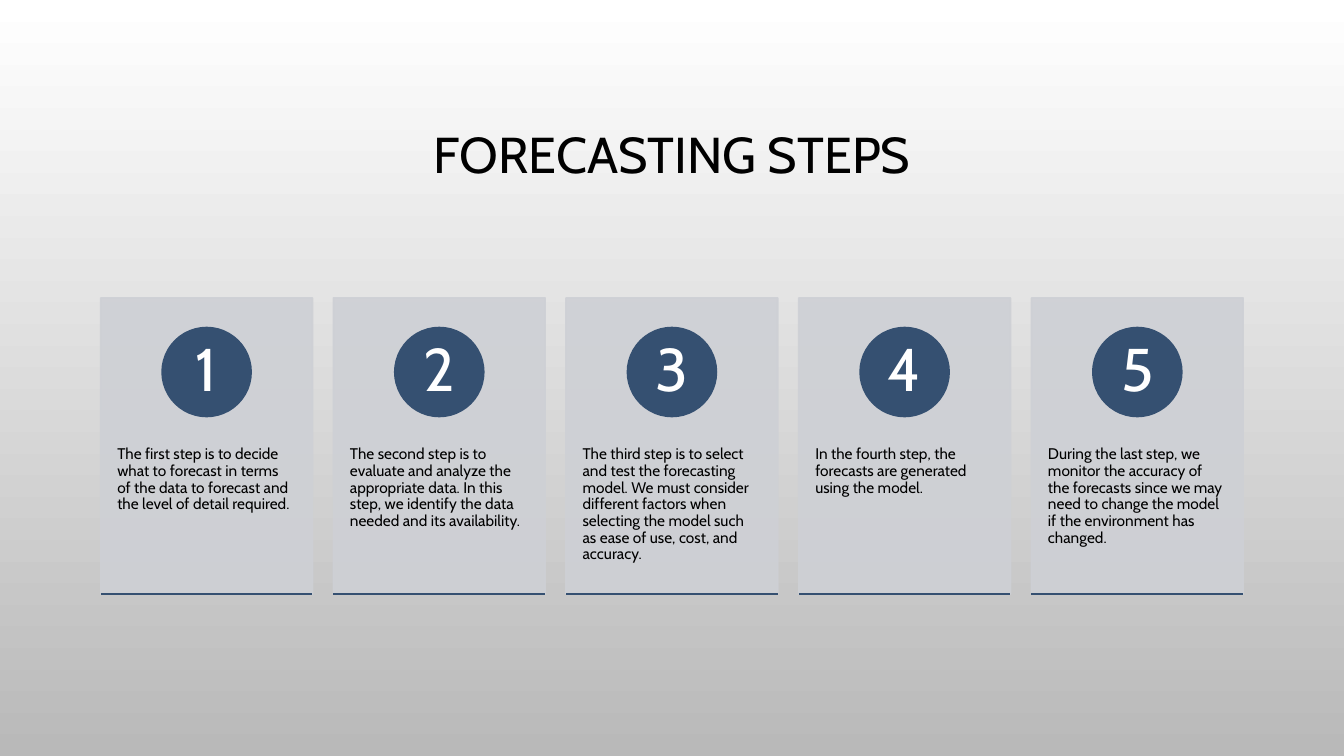
from lxml import etree
from pptx import Presentation
from pptx.dml.color import RGBColor
from pptx.enum import shapes, text
from pptx.oxml.ns import qn
from pptx.util import Pt

NAVY, CARD, BLACK, WHITE = "355071", "CED0D5", "000000", "FFFFFF"
STEPS = [
    "The first step is to decide what to forecast in terms of the data to forecast and the level of detail required.",
    "The second step is to evaluate and analyze the appropriate data. In this step, we identify the data needed and its availability.",
    "The third step is to select and test the forecasting model. We must consider different factors when selecting the model such as ease of use, cost, and accuracy.",
    "In the fourth step, the forecasts are generated using the model.",
    "During the last step, we monitor the accuracy of the forecasts since we may need to change the model if the environment has changed.",
]


def rgb(value):
    return RGBColor.from_string(value)


def write(sp, words, size, color, align, anchor, inset_x, inset_y):
    tf = sp.text_frame
    frame = dict(word_wrap=True, auto_size=text.MSO_AUTO_SIZE.NONE, vertical_anchor=anchor,
                 margin_left=Pt(inset_x), margin_right=Pt(inset_x),
                 margin_top=Pt(inset_y), margin_bottom=Pt(inset_y))
    for name, value in frame.items():
        setattr(tf, name, value)
    p = tf.paragraphs[0]
    p.alignment, p.line_spacing = align, 0.9
    r = p.add_run()
    r.text = words
    for name, value in dict(name="Cabin", size=Pt(size), bold=False).items():
        setattr(r.font, name, value)
    r.font.color.rgb = rgb(color)


prs = Presentation()
prs.slide_width, prs.slide_height = Pt(960), Pt(540)
s = prs.slides.add_slide(prs.slide_layouts[5])

# Background: white fading down to grey
fill = s.background.fill
fill.gradient()
fill.gradient_angle = 270
for stop, color, position in zip(fill.gradient_stops, (WHITE, "B9B9B9"), (0, 1)):
    stop.color.rgb = rgb(color)
    stop.position = position

# Title
title = s.shapes.title
box = dict(left=Pt(72), top=Pt(49), width=Pt(816), height=Pt(126))
for name, value in box.items():
    setattr(title, name, value)
write(title, "FORECASTING STEPS", 36, BLACK, text.PP_ALIGN.CENTER, text.MSO_ANCHOR.MIDDLE, 7.2, 3.6)

# Step cards, evenly spaced between the side margins
card_w, card_top, card_h, circle, number_box = 151.2, 212.8, 211.6, 63.5, 44.9
pitch = (816 - card_w) / (len(STEPS) - 1)
circle_top = card_top + 21.2
for i, words in enumerate(STEPS):
    left = 72 + i * pitch
    center = left + card_w / 2
    group = s.shapes.add_group_shape().shapes

    # Card panel and number circle
    for kind, x, y, w, h, color, alpha in (
        (shapes.MSO_SHAPE.RECTANGLE, left, card_top, card_w, card_h, CARD, 90),
        (shapes.MSO_SHAPE.OVAL, center - circle / 2, circle_top, circle, circle, NAVY, 100),
    ):
        sp = group.add_shape(kind, Pt(x), Pt(y), Pt(w), Pt(h))
        sp.shadow.inherit = False
        sp.fill.solid()
        sp.fill.fore_color.rgb = rgb(color)
        sp.line.color.rgb = rgb(color)
        sp.line.width = Pt(1.25)
        if alpha < 100:
            for clr in sp._element.spPr.iter(qn("a:srgbClr")):
                etree.SubElement(clr, qn("a:alpha"), val=str(alpha * 1000))

    # Number and description
    inner = (circle - number_box) / 2
    tb = group.add_textbox(Pt(center - number_box / 2), Pt(circle_top + inner), Pt(number_box), Pt(number_box))
    write(tb, str(i + 1), 43, WHITE, text.PP_ALIGN.CENTER, text.MSO_ANCHOR.MIDDLE, 5, 0.9)
    tb = group.add_textbox(Pt(left), Pt(293), Pt(card_w), Pt(127))
    write(tb, words, 11, BLACK, text.PP_ALIGN.LEFT, text.MSO_ANCHOR.TOP, 11.8, 26)

    # Base line
    y = card_top + card_h
    line = group.add_connector(shapes.MSO_CONNECTOR.STRAIGHT, Pt(left), Pt(y), Pt(left + card_w), Pt(y))
    line.line.color.rgb = rgb(NAVY)
    line.line.width = Pt(1.25)
    etree.SubElement(line._element.spPr, qn("a:effectLst"))

prs.save("out.pptx")
